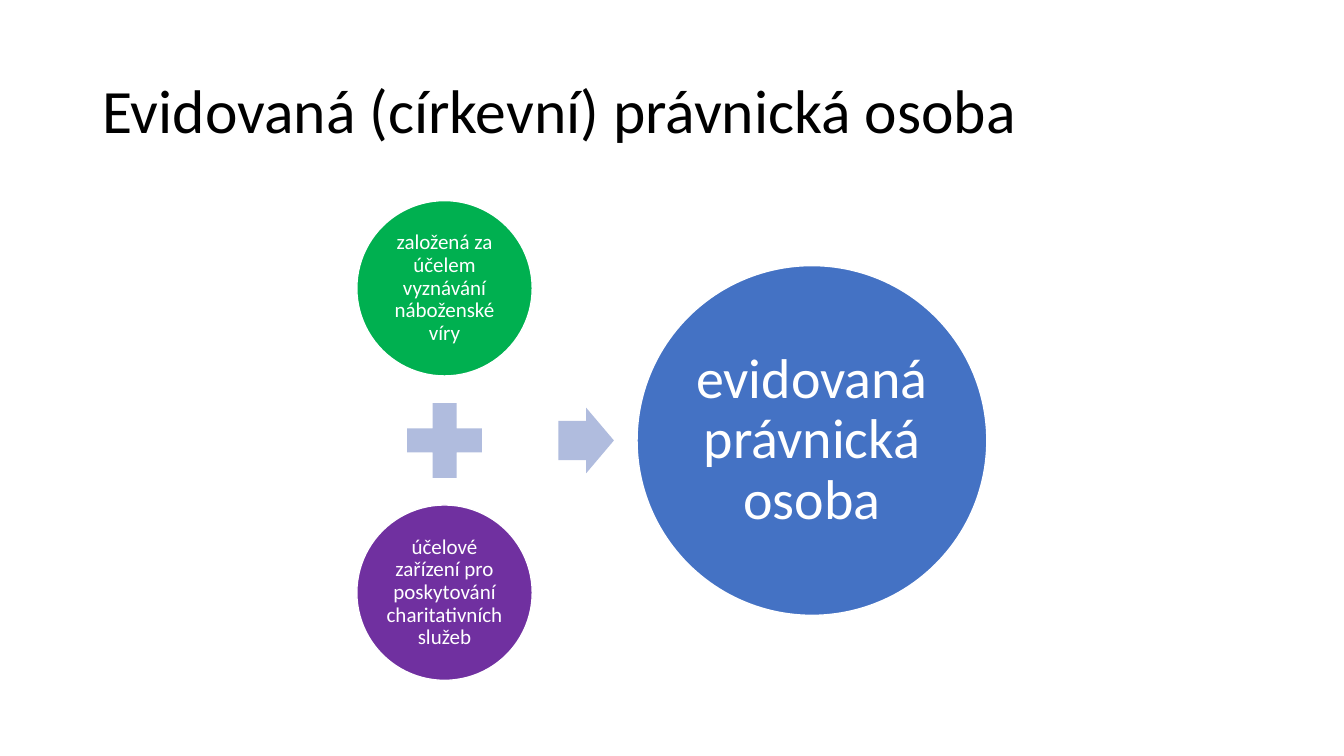
from pptx import Presentation
from pptx.dml.color import RGBColor
from pptx.enum.shapes import MSO_SHAPE
from pptx.enum.text import MSO_ANCHOR, PP_ALIGN
from pptx.util import Inches, Pt

# Grid of square cells, ten to the inch
CELL = Inches(0.1)
COLS, ROWS = 133.33, 75
MID_ROW = 43.7    # axis of the diagram
LEFT_COL = 44.1   # centre of the two small circles and the plus
CIRCLE_STEP = 15.1  # from the axis to each small circle

COLORS = {
    "text": "000000",
    "white": "FFFFFF",
    "green": "00B050",
    "purple": "7030A0",
    "blue": "4472C4",
    "sign": "B0BCDE",
}


def grid(n):
    return round(n * CELL)


def rgb(name):
    return RGBColor.from_string(COLORS[name])


def write(shape, text, size, color, align, inset):
    tf = shape.text_frame
    tf.word_wrap = True
    tf.vertical_anchor = MSO_ANCHOR.MIDDLE
    tf.margin_left = tf.margin_right = Inches(inset)
    tf.margin_top = tf.margin_bottom = Inches(inset)
    tf.text = text
    p = tf.paragraphs[0]
    p.alignment = align
    p.line_spacing = 0.9
    font = p.runs[0].font
    font.name = "Calibri"
    font.size = Pt(size)
    font.color.rgb = rgb(color)


def add_title(s, text):
    tb = s.shapes.add_textbox(grid(9.17), grid(4), grid(115), grid(14.5))
    write(tb, text, 44, "text", PP_ALIGN.LEFT, 0.1)
    tb.text_frame.margin_top = tb.text_frame.margin_bottom = Inches(0.05)


def add_centred(s, kind, col, row, width, height, fill):
    sp = s.shapes.add_shape(kind, grid(col - width / 2), grid(row - height / 2),
                            grid(width), grid(height))
    sp.shadow.inherit = False
    sp.fill.solid()
    sp.fill.fore_color.rgb = rgb(fill)
    sp.line.fill.background()
    return sp


def add_circle(s, col, row, size, fill, text, font_size, inset):
    sp = add_centred(s, MSO_SHAPE.OVAL, col, row, size, size, fill)
    sp.line.color.rgb = rgb("white")
    sp.line.width = Pt(1)
    write(sp, text, font_size, "white", PP_ALIGN.CENTER, inset)


def main():
    prs = Presentation()
    prs.slide_width, prs.slide_height = grid(COLS), grid(ROWS)
    s = prs.slides.add_slide(prs.slide_layouts[6])

    add_title(s, "Evidovaná (církevní) právnická osoba")

    # Two parts, one above and one below the plus
    parts = [
        (-1, "green", "založená za účelem vyznávání náboženské víry"),
        (1, "purple", "účelové zařízení pro poskytování charitativních služeb"),
    ]
    for side, fill, text in parts:
        add_circle(s, LEFT_COL, MID_ROW + side * CIRCLE_STEP, 17.4, fill, text, 15, 0.02)
    add_centred(s, MSO_SHAPE.MATH_PLUS, LEFT_COL, MID_ROW, 10.1, 10.1, "sign")

    # Arrow to the result
    arrow = add_centred(s, MSO_SHAPE.RIGHT_ARROW, 58.15, MID_ROW, 5.5, 6.5, "sign")
    arrow.adjustments[0] = 0.6
    add_circle(s, 80.55, MID_ROW, 34.7, "blue", "evidovaná právnická osoba", 40, 0.06)

    prs.save("out.pptx")


if __name__ == "__main__":
    main()
